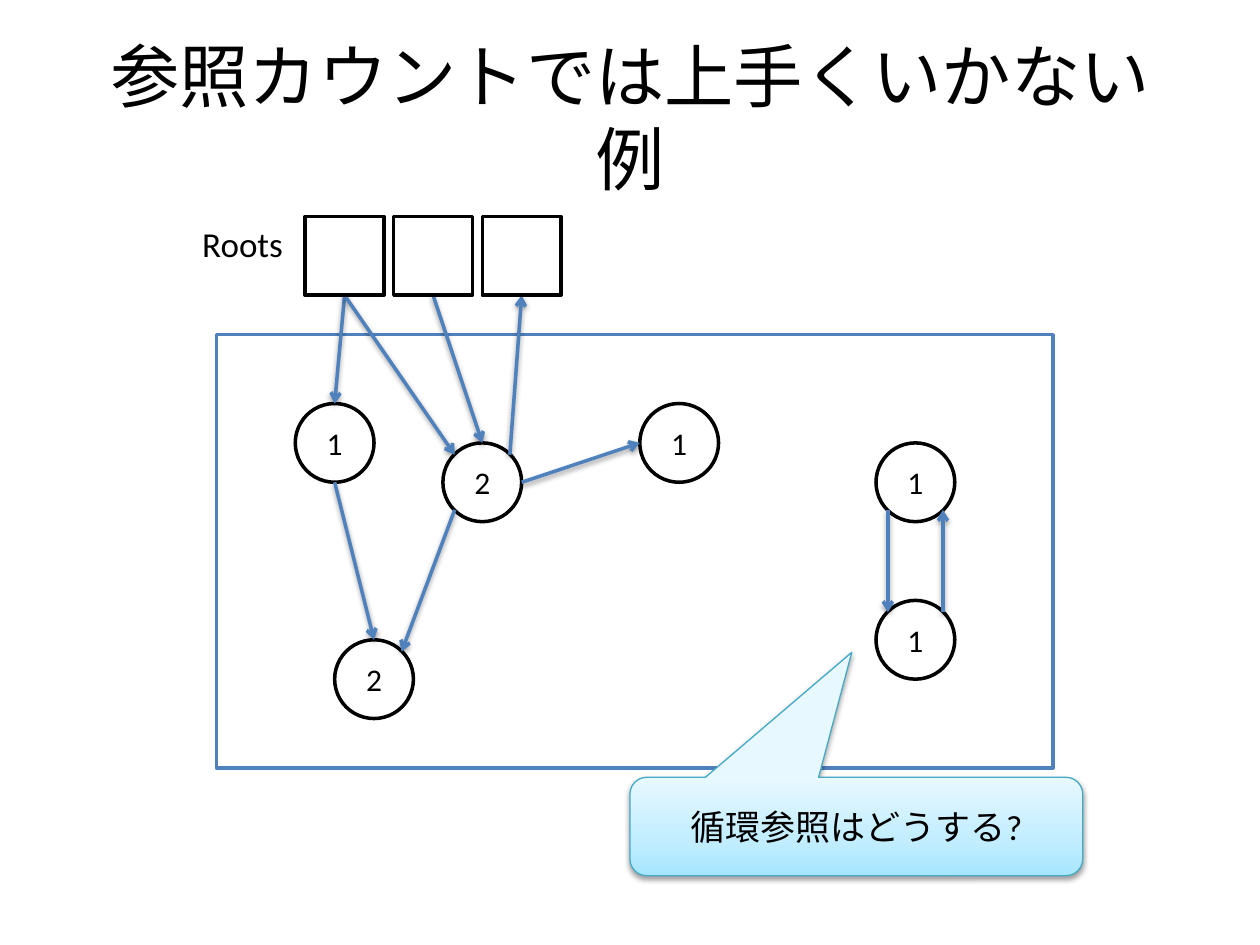
from lxml import etree
from pptx import Presentation
from pptx.dml.color import RGBColor
from pptx.enum import shapes as s, text as t
from pptx.oxml import ns, parse_xml
from pptx.util import Pt

HUES = {"ink": "000000", "paper": "FFFFFF", "blue": "4F81BD", "teal": "46AAC5"}
FADE = [("A7E6FF", 0), ("C1EDFF", 0.35), ("E7F8FF", 1)]
SHADE = (
    f'<a:effectLst {ns.nsdecls("a")}><a:outerShdw blurRad="39370" dist="20320" '
    f'dir="5400000" rotWithShape="0"><a:srgbClr val="{HUES["ink"]}">'
    '<a:alpha val="38000"/></a:srgbClr></a:outerShdw></a:effectLst>'
)

deck = Presentation()
deck.slide_width, deck.slide_height = Pt(720), Pt(540)
page = deck.slides.add_slide(deck.slide_layouts[6])


def write(item, words, size, align="CENTER", anchor="MIDDLE"):
    frame = item.text_frame
    frame.word_wrap = True
    frame.vertical_anchor = getattr(t.MSO_ANCHOR, anchor)
    line = frame.paragraphs[0]
    line.alignment = getattr(t.PP_ALIGN, align)
    run = line.add_run()
    run.text = words
    for key, val in {"name": "Calibri", "size": Pt(size)}.items():
        setattr(run.font, key, val)
    run.font.color.rgb = RGBColor.from_string(HUES["ink"])


def draw(kind, box, hue, width=2):
    item = page.shapes.add_shape(getattr(s.MSO_SHAPE, kind), *map(Pt, box))
    item.shadow.inherit = False
    item.fill.solid()
    item.fill.fore_color.rgb = RGBColor.from_string(HUES["paper"])
    item.line.color.rgb = RGBColor.from_string(HUES[hue])
    item.line.width = Pt(width)
    return item


# Title, heap frame and label
title = page.shapes.add_textbox(*map(Pt, (36, 21.6, 648, 90)))
write(title, "参照カウントでは上手くいかない例", 39.6)
for side in ("margin_left", "margin_right"):
    setattr(title.text_frame, side, Pt(18))
draw("RECTANGLE", (123.75, 191.25, 478.1, 247.5), "blue")
label = page.shapes.add_textbox(*map(Pt, (78.75, 123.75, 90, 31.5)))
write(label, "Roots", 20, "RIGHT", "TOP")

# Objects with their reference counts
SIDE = 45
nodes = {
    "a": (168.75, 230.6, "1"),
    "b": (253.1, 253.1, "2"),
    "c": (365.6, 230.6, "1"),
    "d": (500.6, 253.1, "1"),
    "e": (500.6, 343.1, "1"),
    "f": (191.25, 365.6, "2"),
}
spots = {}
for name, (x, y, count) in nodes.items():
    write(draw("OVAL", (x, y, SIDE, SIDE), "ink"), count, 18)
    spots[name] = (x, y)
roots = [(174.4 + 50.6 * i, 123.75) for i in range(3)]
spots.update(zip(("r1", "r2", "r3"), roots))

# References, from and to a side or a diagonal point
D = 0.35
ports = {
    "n": (0, -0.5), "s": (0, 0.5), "w": (-0.5, 0), "e": (0.5, 0),
    "nw": (-D, -D), "ne": (D, -D), "sw": (-D, D), "se": (D, D),
}
links = [
    ("r1", "s", "a", "n"), ("r1", "s", "b", "nw"), ("r2", "s", "b", "n"),
    ("a", "s", "f", "n"), ("b", "sw", "f", "ne"), ("b", "ne", "r3", "s"),
    ("d", "sw", "e", "nw"), ("e", "ne", "d", "se"), ("b", "e", "c", "w"),
]
for link in links:
    ends = []
    for name, port in (link[:2], link[2:]):
        ends += [Pt(p + SIDE * (0.5 + k)) for p, k in zip(spots[name], ports[port])]
    arrow = page.shapes.add_connector(s.MSO_CONNECTOR.STRAIGHT, *ends)
    arrow.line.color.rgb = RGBColor.from_string(HUES["blue"])
    arrow.line.width = Pt(2)
    look = arrow._element.spPr
    etree.SubElement(look.find(ns.qn("a:ln")), ns.qn("a:tailEnd"), type="arrow")
    look.append(parse_xml(SHADE))

# Callout
note = draw("ROUNDED_RECTANGULAR_CALLOUT", (360, 444.2, 258.75, 56.25), "teal", 0.75)
for i, val in enumerate((-0.01, -1.77, 0.17)):
    note.adjustments[i] = val
note.fill.gradient()
note.fill.gradient_angle = 90
look = note._element.spPr
stops = look.find(".//" + ns.qn("a:gsLst"))
for stop in list(stops):
    stops.remove(stop)
for hue, pos in FADE:
    stop = etree.SubElement(stops, ns.qn("a:gs"), pos=str(int(pos * 100000)))
    etree.SubElement(stop, ns.qn("a:srgbClr"), val=hue)
look.remove(look.find(ns.qn("a:effectLst")))
look.append(parse_xml(SHADE))
write(note, "循環参照はどうする?", 20)

# Root slots
for x, y in roots:
    draw("RECTANGLE", (x, y, SIDE, SIDE), "ink")

deck.save("out.pptx")
